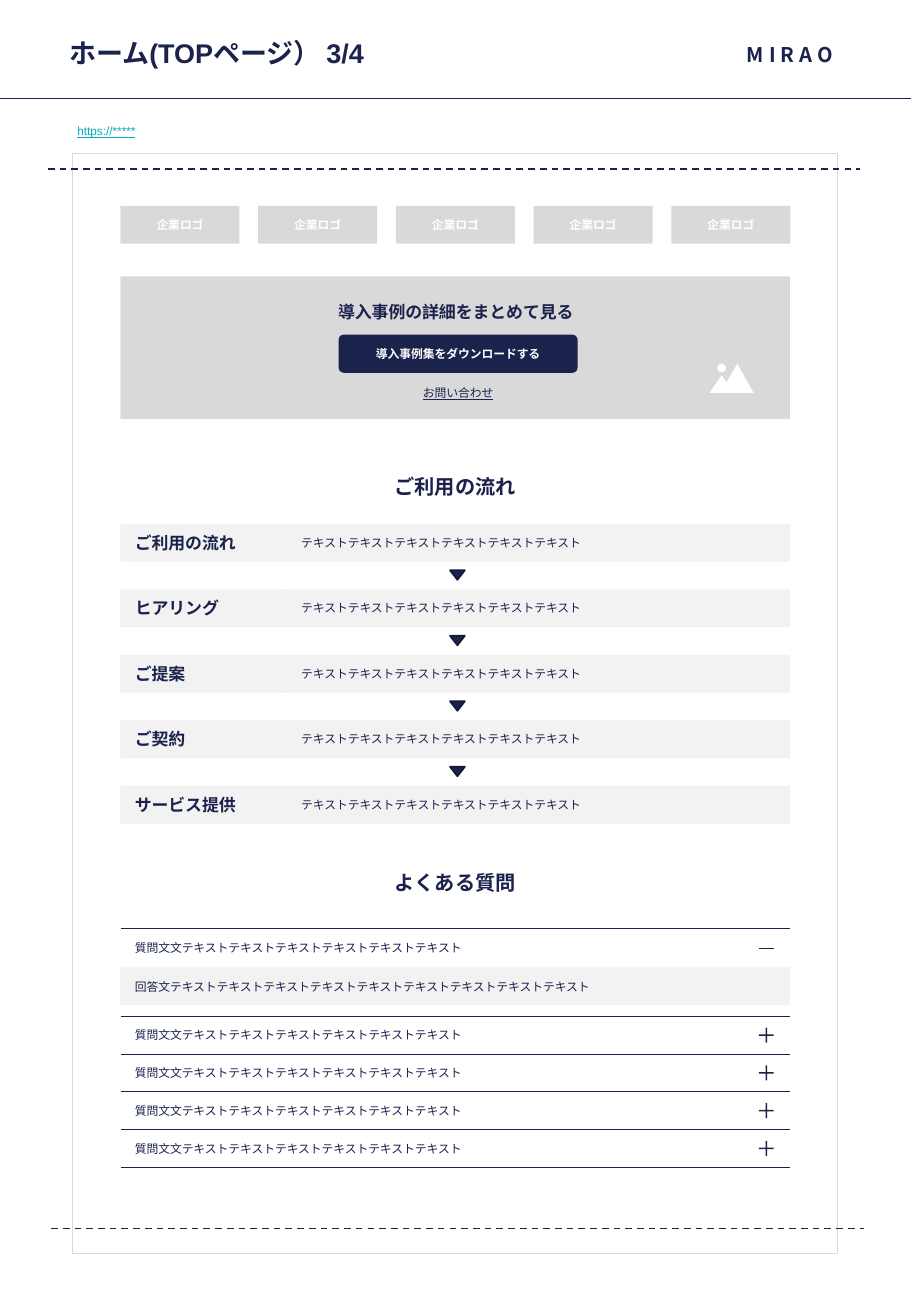
import pptx
import pptx.dml.color
import pptx.enum.dml
import pptx.enum.shapes
import pptx.enum.text
import pptx.util
import lxml.etree

Cm = pptx.util.Cm
Pt = pptx.util.Pt
SHAPE = pptx.enum.shapes.MSO_SHAPE
ALIGN = {
    "left": pptx.enum.text.PP_ALIGN.LEFT,
    "center": pptx.enum.text.PP_ALIGN.CENTER,
    "right": pptx.enum.text.PP_ALIGN.RIGHT,
}
NAVY, GREY, PALE, WHITE, TEAL = "1B224C", "D9D9D9", "F2F2F2", "FFFFFF", "00ACBA"
DRAWING_NS = "http://schemas.openxmlformats.org/drawingml/2006/main"


def color(hex_code):
    return pptx.dml.color.RGBColor.from_string(hex_code)


def add_drawing_tag(parent, tag, **attributes):
    return lxml.etree.SubElement(parent, f"{{{DRAWING_NS}}}{tag}", **attributes)


class Wireframe:
    latin = "Arial"
    japanese = "Noto Sans CJK JP"

    def __init__(self, slide):
        self.slide = slide
        self.shapes = slide.shapes

    def label(self, shape, words, size, hex_code=NAVY, bold=False, underline=False,
              align="left", font=None, pad=(0.1, 0.1), after=0, leading=None,
              tracking=None, anchor=pptx.enum.text.MSO_ANCHOR.MIDDLE):
        frame = shape.text_frame
        frame.text = words
        frame.word_wrap = True
        frame.auto_size = pptx.enum.text.MSO_AUTO_SIZE.NONE
        frame.vertical_anchor = anchor
        frame.margin_left = frame.margin_right = Cm(pad[0])
        frame.margin_top = frame.margin_bottom = Cm(pad[1])
        paragraph = frame.paragraphs[0]
        paragraph.alignment = ALIGN[align]
        paragraph.space_before = Pt(0)
        paragraph.space_after = Pt(after)
        if leading:
            paragraph.line_spacing = leading
        for run in paragraph.runs:
            run.font.size = Pt(size)
            run.font.bold = bold
            run.font.underline = underline
            run.font.color.rgb = color(hex_code)
            run.font.name = font or self.japanese
            properties = run.font._element
            add_drawing_tag(properties, "ea", typeface=self.japanese)
            if tracking:
                properties.set("spc", str(tracking * 100))

    def title(self, words, left, top, width, height):
        heading = self.shapes.title
        heading.left, heading.top = Cm(left), Cm(top)
        heading.width, heading.height = Cm(width), Cm(height)
        self.label(heading, words, 16, bold=True, font=self.latin, after=4)

    def text(self, words, left, top, width, height, size, **style):
        box = self.shapes.add_textbox(Cm(left), Cm(top), Cm(width), Cm(height))
        self.label(box, words, size, **style)

    def paint(self, shape, fill=None, outline=None, weight=0.5):
        shape.shadow.inherit = False
        if fill:
            shape.fill.solid()
            shape.fill.fore_color.rgb = color(fill)
        else:
            shape.fill.background()
        if outline:
            shape.line.color.rgb = color(outline)
            shape.line.width = Pt(weight)
        else:
            shape.line.fill.background()

    def block(self, left, top, width, height, fill=None, kind=SHAPE.RECTANGLE,
              outline=None, weight=0.5, corner=None):
        shape = self.shapes.add_shape(kind, Cm(left), Cm(top), Cm(width), Cm(height))
        self.paint(shape, fill, outline, weight)
        if corner is not None:
            shape.adjustments[0] = corner
        return shape

    def rule(self, left, right, y, weight=0.5, dashed=False):
        line = self.shapes.add_connector(
            pptx.enum.shapes.MSO_CONNECTOR.STRAIGHT, Cm(left), Cm(y), Cm(right), Cm(y))
        line.line.color.rgb = color(NAVY)
        line.line.width = Pt(weight)
        if dashed:
            line.line.dash_style = pptx.enum.dml.MSO_LINE.DASH
        add_drawing_tag(line._element.spPr, "effectLst")

    def outline(self, points, fill):
        corners = [(Cm(x), Cm(y)) for x, y in points]
        builder = self.shapes.build_freeform(*corners[0])
        builder.add_line_segments(corners[1:], close=True)
        shape = builder.convert_to_shape()
        self.paint(shape, fill)
        return shape


def build():
    deck = pptx.Presentation()
    deck.slide_width, deck.slide_height = Cm(19.05), Cm(27.53)
    page = Wireframe(deck.slides.add_slide(deck.slide_layouts[5]))
    left, width, row = 2.52, 14, 0.79
    right = left + width

    page.title("ホーム(TOPページ） 3/4", 1.35, 0.61, 11.99, 0.99)
    page.text("MIRAO", 14.02, 0.64, 3.5, 0.99, 12, bold=True, align="right", tracking=3)
    page.rule(0, 19.05, 2.06)
    page.text("https://*****", 1.52, 2.54, 16, 0.41, 7, hex_code=TEAL,
              underline=True, font=page.latin, after=2)
    page.block(1.52, 3.22, 16, 23.01, outline=GREY)
    page.rule(1, 17.98, 3.53, weight=1, dashed=True)
    page.rule(1.07, 18.06, 25.7, weight=1, dashed=True)

    for column in range(5):
        client = page.block(left + column * 2.88, 4.31, 2.49, row, GREY)
        page.label(client, "企業ロゴ", 7, WHITE, bold=True, align="center")

    page.block(left, 5.78, width, 2.99, GREY)
    mountains = page.outline([(15.42, 7.61), (15.76, 8.22), (14.84, 8.22),
                              (15.09, 7.85), (15.19, 8)], WHITE)
    sun = page.block(15, 7.61, 0.18, 0.18, WHITE, SHAPE.OVAL)
    page.shapes.add_group_shape([mountains, sun])
    page.text("導入事例の詳細をまとめて見る", 3.53, 6.22, 12, 0.61, 10,
              bold=True, align="center", font=page.latin, after=4)
    download = page.block(7.08, 7, 5, 0.8, NAVY, SHAPE.ROUNDED_RECTANGLE, corner=0.14)
    page.label(download, "導入事例集をダウンロードする", 7, WHITE, bold=True, align="center")
    page.text("お問い合わせ", 7.08, 7.82, 5, 0.71, 7, underline=True, align="center",
              font=page.latin, after=2, leading=1.5,
              anchor=pptx.enum.text.MSO_ANCHOR.TOP)

    for heading, top in (("ご利用の流れ", 9.83), ("よくある質問", 18.11)):
        page.text(heading, left, top, width, 0.71, 12, bold=True, align="center",
                  font=page.latin, after=4)

    steps = ["ご利用の流れ", "ヒアリング", "ご提案", "ご契約", "サービス提供"]
    for index, step in enumerate(steps):
        top = 10.96 + index * 1.37
        name = page.block(left, top, 3.5, row, PALE)
        page.label(name, step, 10, bold=True, pad=(0.3, 0.1))
        detail = page.block(left + 3.48, top, width - 3.48, row, PALE)
        page.label(detail, "テキスト" * 6, 7, pad=(0.3, 0.1))
        if index < len(steps) - 1:
            arrow = page.block(9.41, top + 0.97, 0.31, 0.2, NAVY,
                               SHAPE.ISOSCELES_TRIANGLE, "141938", 1)
            arrow.rotation = 180

    answer = page.block(left, 20.24, width, row, PALE)
    page.label(answer, "回答文" + "テキスト" * 9, 7, pad=(0.3, 0.2))
    opened, closed = 19.43, [21.26 + index * row for index in range(4)]
    for top in [opened] + closed:
        question = page.block(left, top, width, row, WHITE)
        page.label(question, "質問文文" + "テキスト" * 6, 7, pad=(0.3, 0.2))
        if top != opened:
            page.block(15.87, top + 0.24, 0.31, 0.31, NAVY, SHAPE.CROSS, corner=0.45)
    page.rule(15.87, 16.18, opened + 0.41, weight=1)
    for y in [opened] + closed + [closed[-1] + row]:
        page.rule(left, right, y)

    deck.save("out.pptx")


if __name__ == "__main__":
    build()
